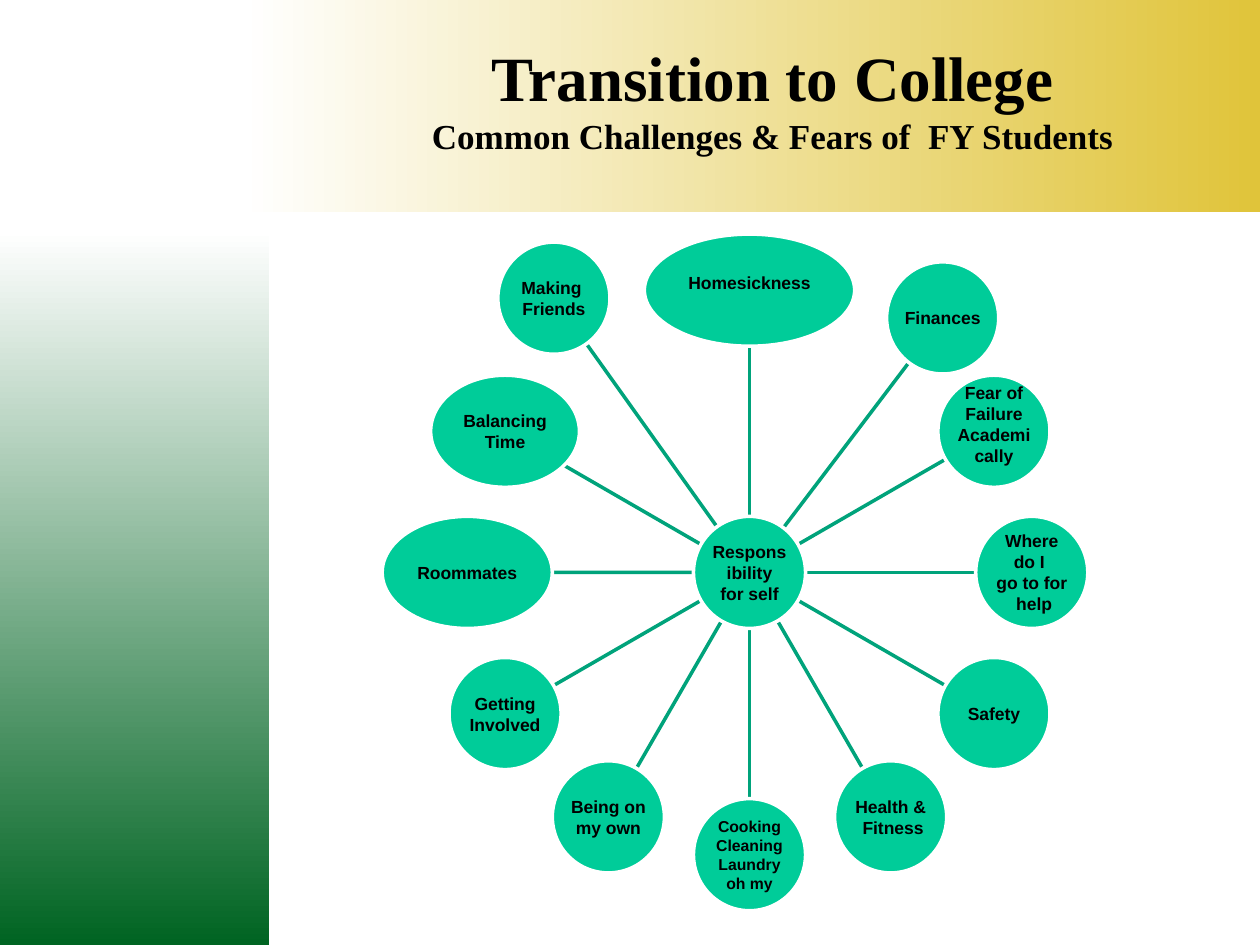
from math import cos, hypot, radians, sin

from lxml.etree import SubElement
from pptx import Presentation
from pptx.dml.color import RGBColor
from pptx.enum.shapes import MSO_CONNECTOR, MSO_SHAPE
from pptx.enum.text import MSO_ANCHOR, MSO_AUTO_SIZE, PP_ALIGN
from pptx.oxml.ns import qn
from pptx.util import Cm, Pt

COLORS = {"white": "FFFFFF", "gold": "E0C43A", "forest": "006422",
          "node": "00CC99", "spoke": "00A37B", "text": "000000"}

TITLE = [("Transition to College", 36),
         ("Common Challenges & Fears of  FY Students", 20)]

BANDS = [
    ((4.88, 0, 20.52, 4.27), "gold", 0),
    ((0, 4.65, 5.43, 14.4), "forest", 270),
]

HUB = ["Responsibility", "for self"]
CENTER_X, CENTER_Y = 15.11, 11.54
RING, SIZE = 5.69, 2.26

CHALLENGES = [
    {"lines": ["Homesickness"], "width": 4.24, "lift": 0.3},
    {"lines": ["Finances"], "angle": 307.2, "ring": 6.44},
    {"lines": [" Fear of ", "Failure", "Academically"], "lift": 0.3},
    {"lines": ["Where", "do I ", "go to for", " help"]},
    {"lines": ["Safety"]},
    {"lines": ["Health &", " Fitness"]},
    {"lines": ["Cooking", "Cleaning", "Laundry", "oh my"], "size": 9},
    {"lines": ["Being on ", "my own"]},
    {"lines": ["Getting", "Involved"]},
    {"lines": ["Roommates"], "width": 3.43},
    {"lines": ["Balancing", "Time"], "width": 3},
    {"lines": ["Making ", "Friends"], "angle": 234.5, "ring": 6.79},
]


def rgb(name):
    return RGBColor.from_string(COLORS[name])


def add_band(s, box, color, angle):
    sp = s.shapes.add_shape(MSO_SHAPE.RECTANGLE, *map(Cm, box))
    sp.shadow.inherit = False
    sp.line.fill.background()
    sp.fill.gradient()
    sp.fill.gradient_angle = angle
    for stop, name in zip(sp.fill.gradient_stops, ("white", color)):
        stop.color.rgb = rgb(name)
    for stop, position in zip(sp.fill.gradient_stops, (0, 1)):
        stop.position = position


def format_title(s):
    title = s.shapes.title
    s.shapes._spTree.append(title._element)
    title.left, title.top, title.width, title.height = map(
        Cm, (6.15, 0, 18.85, 3.94))
    tf = title.text_frame
    tf.auto_size = MSO_AUTO_SIZE.NONE
    tf.vertical_anchor = MSO_ANCHOR.MIDDLE
    p = tf.paragraphs[0]
    p.alignment = PP_ALIGN.CENTER
    p.font.name = "Times New Roman"
    p.font.bold = True
    p.font.color.rgb = rgb("text")
    for i, (line, size) in enumerate(TITLE):
        if i:
            p.add_line_break()
        r = p.add_run()
        r.text = line
        r.font.size = Pt(size)


def add_node(s, x, y, lines, width=SIZE, size=10, lift=0):
    sp = s.shapes.add_shape(MSO_SHAPE.OVAL, Cm(x - width / 2),
                            Cm(y - SIZE / 2), Cm(width), Cm(SIZE))
    sp.shadow.inherit = False
    sp.fill.solid()
    sp.fill.fore_color.rgb = rgb("node")
    sp.line.color.rgb = rgb("white")
    sp.line.width = Pt(2)
    tf = sp.text_frame
    tf.word_wrap = True
    tf.vertical_anchor = MSO_ANCHOR.MIDDLE
    tf.margin_left = tf.margin_right = tf.margin_top = Cm(0.03)
    tf.margin_bottom = Cm(0.03 + lift)
    for i, line in enumerate(lines):
        p = tf.add_paragraph() if i else tf.paragraphs[0]
        p.text = line
        p.alignment = PP_ALIGN.CENTER
        p.font.name = "Arial"
        p.font.size = Pt(size)
        p.font.bold = True
        p.font.color.rgb = rgb("text")


def add_spoke(s, dx, dy, ring, width):
    a, b = width / 2, SIZE / 2
    start, end = b, ring - a * b / hypot(b * dx, a * dy)
    cx = s.shapes.add_connector(
        MSO_CONNECTOR.STRAIGHT,
        Cm(CENTER_X + start * dx), Cm(CENTER_Y + start * dy),
        Cm(CENTER_X + end * dx), Cm(CENTER_Y + end * dy))
    cx.line.color.rgb = rgb("spoke")
    cx.line.width = Pt(2)
    SubElement(cx._element.spPr, qn("a:effectLst"))


def main():
    prs = Presentation()
    prs.slide_width, prs.slide_height = Cm(25.4), Cm(19.05)
    s = prs.slides.add_slide(prs.slide_layouts[5])
    for band in BANDS:
        add_band(s, *band)
    format_title(s)

    step = 360 / len(CHALLENGES)
    placed = []
    for i, item in enumerate(CHALLENGES):
        angle = radians(item.get("angle", 270 + i * step))
        ring = item.get("ring", RING)
        dx, dy = cos(angle), sin(angle)
        add_spoke(s, dx, dy, ring, item.get("width", SIZE))
        placed.append((CENTER_X + ring * dx, CENTER_Y + ring * dy, item))

    add_node(s, CENTER_X, CENTER_Y, HUB)
    for x, y, item in placed:
        add_node(s, x, y, item["lines"], item.get("width", SIZE),
                 item.get("size", 10), item.get("lift", 0))
    prs.save("out.pptx")


if __name__ == "__main__":
    main()
